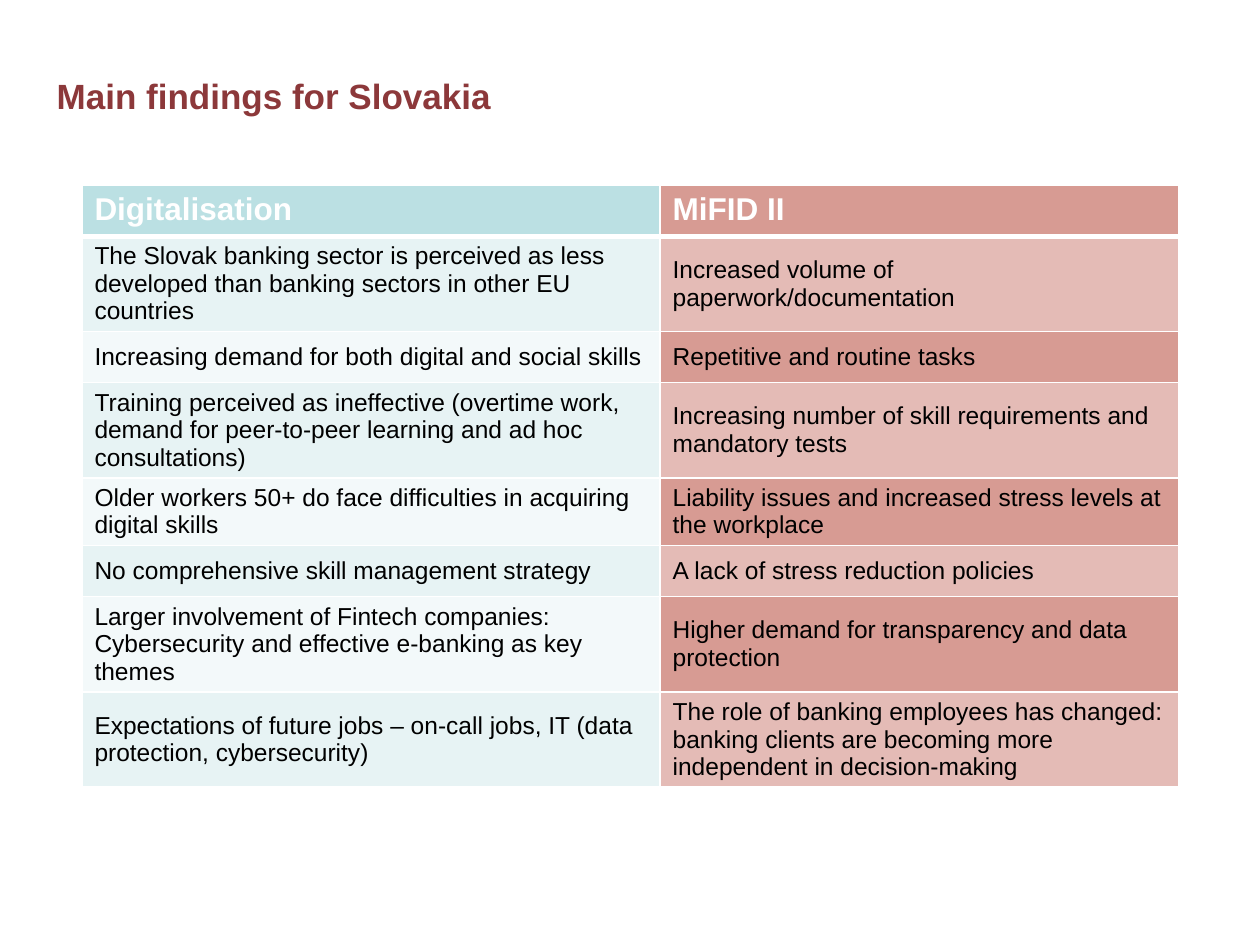
from dataclasses import dataclass

from lxml import etree
from pptx import Presentation
from pptx.dml.color import RGBColor
from pptx.enum import text as t
from pptx.oxml import ns
from pptx.util import Pt


@dataclass(frozen=True)
class Theme:
    face: str = "Arial"
    title: str = "8C383A"
    white: str = "FFFFFF"
    ink: str = "000000"
    heads: tuple = ("BBE0E3", "D79B93")
    bands: tuple = (("E7F3F4", "E4BBB6"), ("F3F9FA", "D79B93"))
    big: int = 20
    mid: int = 18
    small: int = 14


THEME = Theme()
HEADS = ("Digitalisation", "MiFID II")
FINDS = (
    ("The Slovak banking sector is perceived as less developed than banking "
     "sectors in other EU countries",
     "Increased volume of paperwork/documentation"),
    ("Increasing demand for both digital and social skills",
     "Repetitive and routine tasks"),
    ("Training perceived as ineffective (overtime work, demand for "
     "peer-to-peer learning and ad hoc consultations)",
     "Increasing number of skill requirements and mandatory tests"),
    ("Older workers 50+ do face difficulties in acquiring digital skills",
     "Liability issues and increased stress levels at the workplace"),
    ("No comprehensive skill management strategy",
     "A lack of stress reduction policies"),
    ("Larger involvement of Fintech companies: Cybersecurity and effective "
     "e-banking as key themes",
     "Higher demand for transparency and data protection"),
    ("Expectations of future jobs – on-call jobs, IT (data protection, "
     "cybersecurity)",
     "The role of banking employees has changed: banking clients are "
     "becoming more independent in decision-making"),
)


def apply(obj, form):
    for name, value in form.items():
        setattr(obj, name, value)


def write(frame, words, size, color, bold):
    frame.text = words
    para = frame.paragraphs[0]
    para.alignment = t.PP_ALIGN.LEFT
    font = para.runs[0].font
    apply(font, {"name": THEME.face, "size": Pt(size), "bold": bold})
    font.color.rgb = RGBColor.from_string(color)


def edge(cell, widths):
    """Draw white cell borders; widths maps a side (L, R, T, B) to points."""
    props = cell._tc.get_or_add_tcPr()
    for spot, (side, width) in enumerate(widths.items()):
        line = etree.Element(ns.qn(f"a:ln{side}"), w=str(Pt(width)))
        fill = etree.SubElement(line, ns.qn("a:solidFill"))
        etree.SubElement(fill, ns.qn("a:srgbClr"), val=THEME.white)
        props.insert(spot, line)


def add_title(slide, words):
    title = slide.shapes.title
    apply(title, {"left": Pt(25.2), "top": Pt(9.4),
                  "width": Pt(648), "height": Pt(90)})
    write(title.text_frame, words, THEME.big, THEME.title, True)
    title.text_frame.vertical_anchor = t.MSO_ANCHOR.MIDDLE


def add_grid(slide, rows):
    frame = slide.shapes.add_table(len(rows), len(HEADS), Pt(46.8), Pt(105.8),
                                   Pt(627.1), Pt(358.6))
    grid = frame.table
    for col, width in zip(grid.columns, (330.4, 296.7)):
        col.width = Pt(width)
    for y, row in enumerate(rows):
        grid.rows[y].height = Pt(35.3 if y == 3 else 29.2)
        head = y == 0
        fills = THEME.heads if head else THEME.bands[(y - 1) % 2]
        for x, words in enumerate(row):
            cell = grid.cell(y, x)
            if head:
                write(cell.text_frame, words, THEME.mid, THEME.white, True)
            else:
                write(cell.text_frame, words, THEME.small, THEME.ink, False)
                cell.vertical_anchor = t.MSO_ANCHOR.MIDDLE
            cell.fill.solid()
            cell.fill.fore_color.rgb = RGBColor.from_string(fills[x])
            edge(cell, {"L": 1, "R": 1, "T": 3 if y == 1 else 1,
                        "B": 3 if head else 1})


def main():
    deck = Presentation()
    apply(deck, {"slide_width": Pt(720), "slide_height": Pt(540)})
    slide = deck.slides.add_slide(deck.slide_layouts[5])
    add_title(slide, "Main findings for Slovakia")
    add_grid(slide, (HEADS, *FINDS))
    deck.save("out.pptx")


if __name__ == "__main__":
    main()
